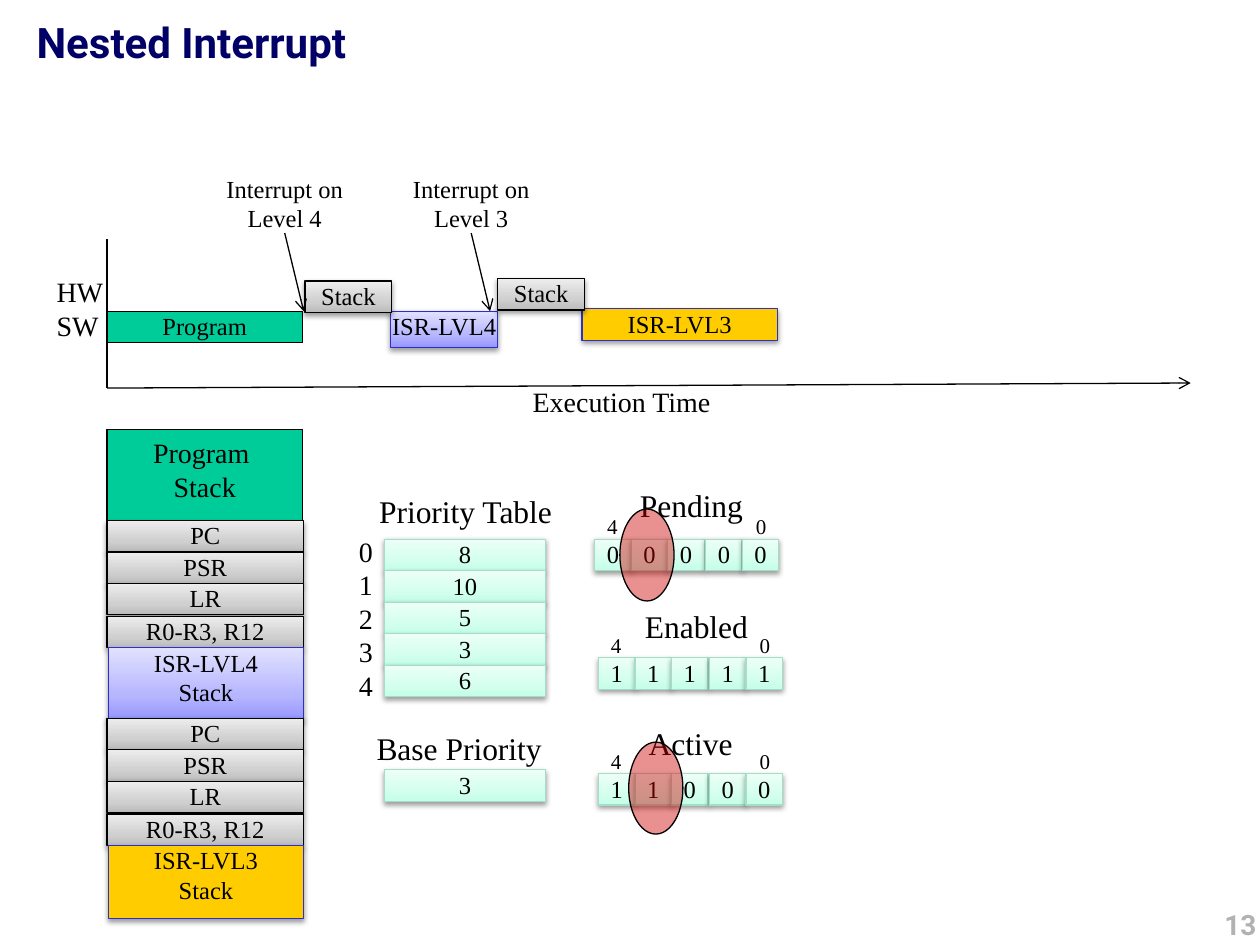
from lxml.etree import SubElement
from pptx import Presentation
from pptx.dml.color import RGBColor
from pptx.enum.shapes import MSO_CONNECTOR, MSO_SHAPE
from pptx.enum.text import MSO_ANCHOR, MSO_AUTO_SIZE, PP_ALIGN
from pptx.oxml.ns import qn
from pptx.util import Pt

EMU_PER_PX = 9144
BODY_FONT = "Times New Roman"
TITLE_FONT = "Roboto"

BLACK = RGBColor(0x00, 0x00, 0x00)
NAVY = RGBColor(0x00, 0x00, 0x66)
SILVER = RGBColor(0xB2, 0xB2, 0xB2)
GREEN = RGBColor(0x00, 0xCC, 0x99)
YELLOW = RGBColor(0xFF, 0xCC, 0x00)
RED = RGBColor(0xCC, 0x00, 0x00)
BLUE = RGBColor(0x2E, 0x2E, 0xCB)
MINT_LINE = RGBColor(0xA5, 0xDE, 0xC6)
GRAY_STOPS = [RGBColor(0xED, 0xED, 0xED), RGBColor(0xD0, 0xD0, 0xD0), RGBColor(0xBC, 0xBC, 0xBC)]
LILAC_STOPS = [RGBColor(0xE1, 0xE1, 0xFF), RGBColor(0xB6, 0xB6, 0xFF), RGBColor(0x95, 0x95, 0xFF)]
MINT_STOPS = [RGBColor(0xED, 0xFF, 0xF8), RGBColor(0xD4, 0xFF, 0xEE), RGBColor(0xC3, 0xFF, 0xE8)]


def px(*lengths):
    return [length * EMU_PER_PX for length in lengths]


def add_color(parent, color, alpha=None):
    element = SubElement(parent, qn("a:srgbClr"), val=str(color))
    if alpha:
        SubElement(element, qn("a:alpha"), val=str(alpha * 1000))


def format_text(text_frame, size, color=BLACK, align=PP_ALIGN.LEFT, font=BODY_FONT, bold=False):
    text_frame.vertical_anchor = MSO_ANCHOR.TOP
    for paragraph in text_frame.paragraphs:
        paragraph.alignment = align
        for run in paragraph.runs:
            run.font.name = font
            run.font.size = Pt(size)
            run.font.bold = bold
            run.font.color.rgb = color


def add_label(slide, box, text, size, wrap=False, align=PP_ALIGN.LEFT):
    text_frame = slide.shapes.add_textbox(*px(*box)).text_frame
    text_frame.word_wrap = wrap
    text_frame.auto_size = MSO_AUTO_SIZE.SHAPE_TO_FIT_TEXT
    text_frame.text = text
    format_text(text_frame, size, align=align)


def set_gradient(shape, colors):
    shape.fill.gradient()
    shape.fill.gradient_angle = 270
    stops = shape.fill._fill._gradFill.find(qn("a:gsLst"))
    stops.clear()
    for position, color in zip((0, 65, 100), colors):
        add_color(SubElement(stops, qn("a:gs"), pos=str(position * 1000)), color)


def add_block(slide, box, text, fill, line, size=14, inset=0, shadow=True):
    shape = slide.shapes.add_shape(MSO_SHAPE.RECTANGLE, *px(*box))
    if isinstance(fill, list):
        set_gradient(shape, fill)
    else:
        shape.fill.solid()
        shape.fill.fore_color.rgb = fill
    shape.line.color.rgb = line
    shape.line.width = Pt(0.75)
    shape.shadow.inherit = False
    if shadow:
        effects = shape._element.spPr.find(qn("a:effectLst"))
        outer = SubElement(effects, qn("a:outerShdw"), blurRad=str(Pt(3.1)), dist=str(Pt(1.6)),
                           dir="5400000", rotWithShape="0")
        add_color(outer, BLACK, 38)
    text_frame = shape.text_frame
    text_frame.margin_left = text_frame.margin_right = inset * EMU_PER_PX
    text_frame.margin_top = text_frame.margin_bottom = inset * EMU_PER_PX // 2
    text_frame.text = text
    format_text(text_frame, size, align=PP_ALIGN.CENTER)


def add_line(slide, start, end, arrow=True):
    connector = slide.shapes.add_connector(MSO_CONNECTOR.STRAIGHT, *px(*start, *end))
    connector.line.color.rgb = BLACK
    connector.line.width = Pt(0.75)
    if arrow:
        SubElement(connector.line._get_or_add_ln(), qn("a:tailEnd"), type="arrow")
    SubElement(connector._element.spPr, qn("a:effectLst"))


def add_marker(slide, left, top):
    ellipse = slide.shapes.add_shape(MSO_SHAPE.OVAL, *px(left, top, 43, 73))
    ellipse.fill.solid()
    ellipse.fill.fore_color.rgb = RED
    color = ellipse._element.spPr.find(qn("a:solidFill")).find(qn("a:srgbClr"))
    SubElement(color, qn("a:alpha"), val="43000")
    ellipse.line.color.rgb = BLACK
    ellipse.line.width = Pt(0.75)
    ellipse.shadow.inherit = False


def add_heading(slide, text, page):
    title = slide.shapes.title
    title.left, title.top, title.width, title.height = px(19, 8, 971, 100)
    title.text_frame.text = text
    format_text(title.text_frame, 24, NAVY, font=TITLE_FONT, bold=True)
    number = slide.shapes.add_textbox(*px(690, 715, 317, 50)).text_frame
    number.word_wrap = True
    number.text = page
    format_text(number, 16, SILVER, PP_ALIGN.RIGHT, TITLE_FONT, True)


def add_interrupt(slide, left, top, level):
    add_line(slide, (left + 67, top + 52), (left + 82, top + 114))
    add_label(slide, (left, top, 134, 57), f"Interrupt on Level {level}", 14, True, PP_ALIGN.CENTER)


def add_timeline(slide, left, top):
    axis = top + 118
    add_block(slide, (left, top + 57, 155, 25), "Program", GREEN, BLACK, shadow=False)
    add_block(slide, (left + 225, top + 57, 85, 29), "ISR-LVL4", LILAC_STOPS, BLUE)
    add_block(slide, (left + 157, top + 33, 69, 25), "Stack", GRAY_STOPS, BLACK)
    add_block(slide, (left + 377, top + 55, 155, 25), "ISR-LVL3", YELLOW, BLUE)
    add_block(slide, (left + 310, top + 31, 69, 25), "Stack", GRAY_STOPS, BLACK)
    add_interrupt(slide, left + 74, top - 57, 4)
    add_interrupt(slide, left + 222, top - 57, 3)
    add_line(slide, (left, axis), (left + 860, axis - 4))
    add_line(slide, (left, axis), (left, top), arrow=False)
    add_label(slide, (left + 328, axis - 8, 163, 37), "Execution Time", 16)
    add_label(slide, (left - 50, top + 23, 58, 64), "HW\nSW", 16)


def add_stack_frame(slide, left, top, routine, fill):
    for index, register in enumerate(("PC", "PSR", "LR", "R0-R3, R12")):
        add_block(slide, (left, top + index * 76 // 3, 156, 25), register, GRAY_STOPS, BLACK)
    add_block(slide, (left + 1, top + 101, 155, 58), f"{routine}\nStack", fill, BLUE)


def add_stack(slide, left, top):
    add_block(slide, (left, top, 155, 72), "Program \nStack", GREEN, BLACK, 16, 10, False)
    add_stack_frame(slide, left, top + 72, "ISR-LVL4", LILAC_STOPS)
    add_stack_frame(slide, left, top + 229, "ISR-LVL3", YELLOW)


def add_priorities(slide, left, top):
    priorities = (8, 10, 5, 3, 6)
    for index, priority in enumerate(priorities):
        add_block(slide, (left, top + index * 25, 128, 25), str(priority), MINT_STOPS, MINT_LINE)
    levels = "\n".join(str(level) for level in range(len(priorities)))
    add_label(slide, (left - 30, top - 9, 31, 145), levels, 16)
    add_label(slide, (left - 14, top - 42, 159, 40), "Priority Table", 18)
    add_block(slide, (left, top + 183, 128, 25), "3", MINT_STOPS, MINT_LINE)
    add_label(slide, (left - 16, top + 146, 153, 40), "Base Priority", 18)


def add_register(slide, left, top, name, bits, name_box):
    offset_left, offset_top, width = name_box
    for index, bit in enumerate(bits):
        add_block(slide, (left + index * 147 // 5, top, 29, 25), bit, MINT_STOPS, MINT_LINE)
    add_label(slide, (left, top - 25, 29, 30), "4", 12)
    add_label(slide, (left + 118, top - 25, 29, 30), "0", 12)
    add_label(slide, (left + offset_left, top + offset_top, width, 40), name, 18)


def main():
    presentation = Presentation()
    presentation.slide_width, presentation.slide_height = px(1000, 750)
    slide = presentation.slides.add_slide(presentation.slide_layouts[5])
    add_heading(slide, "Nested Interrupt", "13")
    add_timeline(slide, 85, 190)
    add_stack(slide, 85, 341)
    add_priorities(slide, 305, 428)
    add_register(slide, 472, 428, "Pending", "00000", (26, -47, 103))
    add_register(slide, 475, 522, "Enabled", "11111", (27, -45, 103))
    add_register(slide, 475, 614, "Active", "11000", (30, -44, 88))
    add_marker(slide, 492, 404)
    add_marker(slide, 499, 589)
    presentation.save("out.pptx")


if __name__ == "__main__":
    main()
